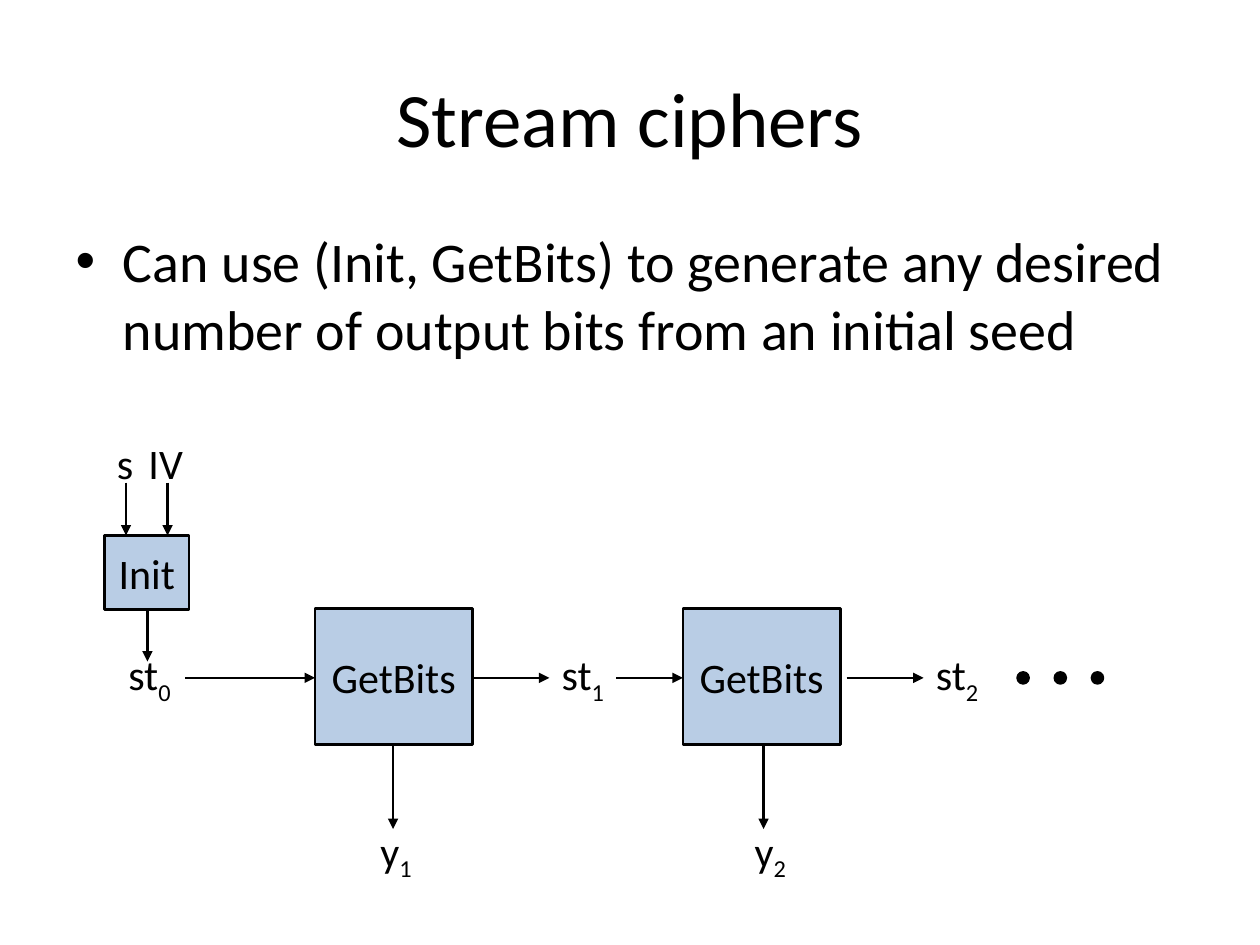
from pptx import Presentation
from pptx.dml.color import RGBColor
from pptx.enum.shapes import MSO_CONNECTOR as Connector, MSO_SHAPE as Shape
from pptx.enum.text import MSO_ANCHOR as Anchor, MSO_AUTO_SIZE as AutoSize, PP_ALIGN as Align
from pptx.oxml.ns import qn
from pptx.util import Inches, Pt
from lxml.etree import SubElement

TITLE = "Stream ciphers"
BULLET = "Can use (Init, GetBits) to generate any desired number of output bits from an initial seed"
BLACK, BLUE = "000000", "B9CDE5"
FLOW_Y = 5.38
INPUT_Y, INIT_TOP, INIT_BOTTOM, STATE_TOP = 3.83, 4.25, 4.83, 5.25
BITS_TOP, BITS_BOTTOM, OUTPUT_TOP = 4.83, 5.92, 6.58

BOXES = [
    ("Init", 0.83, INIT_TOP, 0.67, 0.59),
    ("GetBits", 2.5, BITS_TOP, 1.25, 1.08),
    ("GetBits", 5.42, BITS_TOP, 1.25, 1.08),
]
LABELS = [
    ("s", "", 0.83, 3.42, 0.33),
    ("IV", "", 1.08, 3.42, 0.48),
    ("st", "0", 0.92, 5.1, 0.56),
    ("st", "1", 4.36, 5.1, 0.56),
    ("st", "2", 7.33, 5.1, 0.56),
    ("y", "1", 2.92, 6.5, 0.47),
    ("y", "2", 5.89, 6.5, 0.47),
]
FLOW_ARROWS = [(1.47, 2.5), (3.75, 4.36), (4.89, 5.42), (6.72, 7.33)]
DOWN_ARROWS = [
    (1, INPUT_Y, INIT_TOP),
    (1.33, INPUT_Y, INIT_TOP),
    (1.17, INIT_BOTTOM, STATE_TOP),
    (3.12, BITS_BOTTOM, OUTPUT_TOP),
    (6.06, BITS_BOTTOM, OUTPUT_TOP),
]
DOT_LEFT, DOT_STEP, DOT_SIZE, DOT_COUNT = 8.08, 0.295, 0.08, 3


def paint(target, color):
    """Give a fill, line or font a solid colour."""
    color_format = target.color if hasattr(target, "color") else target.fore_color
    color_format.rgb = RGBColor.from_string(color)


def style_text(frame, size):
    """Set the typeface, size and colour of every run."""
    for para in frame.paragraphs:
        for span in para.runs:
            span.font.name, span.font.size = "Calibri", Pt(size)
            paint(span.font, BLACK)


def fill_placeholder(holder, text, size, *place):
    """Move a placeholder and give it its text."""
    holder.left, holder.top, holder.width, holder.height = map(Inches, place)
    holder.text_frame.text = text
    style_text(holder.text_frame, size)


def add_solid(page, kind, place, fill, weight):
    """Add a filled preset shape with a black outline."""
    shape = page.shapes.add_shape(kind, *map(Inches, place))
    shape.shadow.inherit = False
    shape.fill.solid()
    paint(shape.fill, fill)
    paint(shape.line, BLACK)
    shape.line.width = Pt(weight)
    return shape


def add_box(page, text, *place):
    """Add a blue box with a centred name."""
    frame = add_solid(page, Shape.RECTANGLE, place, BLUE, 1.5).text_frame
    frame.text = text
    frame.word_wrap = False
    frame.vertical_anchor = Anchor.MIDDLE
    frame.paragraphs[0].alignment = Align.CENTER
    style_text(frame, 24)


def add_label(page, text, subscript, left, top, width):
    """Add a variable name with an optional subscript."""
    box = page.shapes.add_textbox(*map(Inches, (left, top, width, 0.5)))
    frame = box.text_frame
    frame.word_wrap = False
    frame.auto_size = AutoSize.SHAPE_TO_FIT_TEXT
    frame.text = text
    if subscript:
        span = frame.paragraphs[0].add_run()
        span.text = subscript
        span.font._element.set("baseline", "-25000")
    style_text(frame, 24)


def add_arrow(page, *ends):
    """Add a straight black arrow between two points."""
    arrow = page.shapes.add_connector(Connector.STRAIGHT, *map(Inches, ends))
    paint(arrow.line, BLACK)
    arrow.line.width = Pt(1.5)
    SubElement(arrow.line._get_or_add_ln(), qn("a:tailEnd"), type="triangle")
    SubElement(arrow._element.spPr, qn("a:effectLst"))


def main():
    """Build the slide and save the deck."""
    deck = Presentation()
    deck.slide_width, deck.slide_height = Inches(10), Inches(7.5)
    page = deck.slides.add_slide(deck.slide_layouts[1])
    fill_placeholder(page.shapes.title, TITLE, 44, 0.5, 0.3, 9, 1.25)
    fill_placeholder(page.placeholders[1], BULLET, 32, 0.5, 1.75, 9, 4.95)
    for box in BOXES:
        add_box(page, *box)
    for label in LABELS:
        add_label(page, *label)
    for start, end in FLOW_ARROWS:
        add_arrow(page, start, FLOW_Y, end, FLOW_Y)
    for x, top, bottom in DOWN_ARROWS:
        add_arrow(page, x, top, x, bottom)
    for index in range(DOT_COUNT):
        place = (DOT_LEFT + index * DOT_STEP, FLOW_Y - DOT_SIZE / 2, DOT_SIZE, DOT_SIZE)
        add_solid(page, Shape.OVAL, place, BLACK, 2)
    deck.save("out.pptx")


if __name__ == "__main__":
    main()
